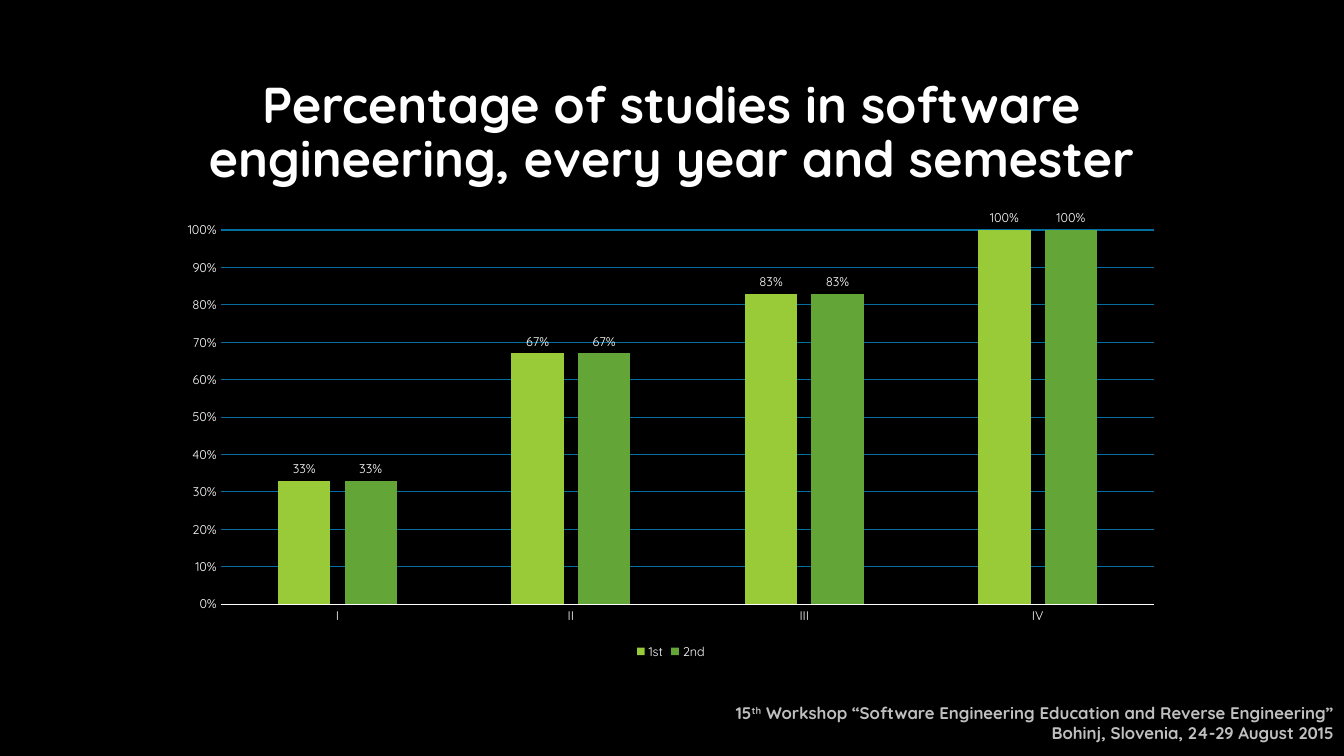
"""Build the slide on the share of software engineering studies per year and semester."""
from dataclasses import dataclass

import lxml.etree
import pptx
import pptx.chart.data
import pptx.dml.color
import pptx.enum.chart
import pptx.enum.text
import pptx.oxml
import pptx.oxml.ns
import pptx.util
from pptx.util import Inches

BLACK = pptx.dml.color.RGBColor(0x00, 0x00, 0x00)
WHITE = pptx.dml.color.RGBColor(0xFF, 0xFF, 0xFF)
SILVER = pptx.dml.color.RGBColor(0xBF, 0xBF, 0xBF)
GRID_BLUE = pptx.dml.color.RGBColor(0x05, 0x6E, 0xA0)
LIME = pptx.dml.color.RGBColor(0x99, 0xCB, 0x38)
GREEN = pptx.dml.color.RGBColor(0x63, 0xA5, 0x37)
FONT = "Quicksand"
YEARS = ["I", "II", "III", "IV"]


@dataclass(frozen=True)
class Span:
    text: str
    superscript: bool = False


@dataclass(frozen=True)
class TextBlock:
    box: tuple[float, float, float, float]
    lines: list[list[Span]]
    size: float
    color: pptx.dml.color.RGBColor
    align: pptx.enum.text.PP_ALIGN
    anchor: pptx.enum.text.MSO_ANCHOR
    line_spacing: float = 1.0


@dataclass(frozen=True)
class Semester:
    name: str
    shares: tuple[float, ...]
    color: pptx.dml.color.RGBColor


WORKSHOP = TextBlock(
    (7.08, 6.92, 6.25, 0.5),
    [
        [
            Span("15"),
            Span("th", superscript=True),
            Span(" Workshop “Software Engineering Education and Reverse Engineering”"),
        ],
        [Span("Bohinj, Slovenia, 24-29 August 2015")],
    ],
    12, SILVER, pptx.enum.text.PP_ALIGN.RIGHT, pptx.enum.text.MSO_ANCHOR.MIDDLE,
)
TITLE = TextBlock(
    (1.66, 0.42, 10, 1.5),
    [[Span("Percentage of studies in software engineering, every year and semester")]],
    36, WHITE, pptx.enum.text.PP_ALIGN.CENTER, pptx.enum.text.MSO_ANCHOR.BOTTOM, 0.9,
)
SEMESTERS = [
    Semester("1st", (0.33, 0.67, 0.83, 1), LIME),
    Semester("2nd", (0.33, 0.67, 0.83, 1), GREEN),
]


def style_font(font, size: float, color: pptx.dml.color.RGBColor, bold: bool = False) -> None:
    font.name = FONT
    font.size = pptx.util.Pt(size)
    font.bold = bold
    font.color.rgb = color


def add_text(slide, block: TextBlock) -> None:
    frame = slide.shapes.add_textbox(*map(Inches, block.box)).text_frame
    frame.word_wrap = True
    frame.vertical_anchor = block.anchor
    for index, line in enumerate(block.lines):
        paragraph = frame.add_paragraph() if index else frame.paragraphs[0]
        paragraph.alignment = block.align
        paragraph.line_spacing = block.line_spacing
        for span in line:
            run = paragraph.add_run()
            run.text = span.text
            style_font(run.font, block.size, block.color, bold=True)
            if span.superscript:
                run._r.get_or_add_rPr().set("baseline", "30000")


def place_plot(chart) -> None:
    plot_area = chart._chartSpace.chart.plotArea
    for old in plot_area.findall(pptx.oxml.ns.qn("c:layout")):
        plot_area.remove(old)
    layout = pptx.oxml.parse_xml(f"<c:layout {pptx.oxml.ns.nsdecls('c')}/>")
    manual = lxml.etree.SubElement(layout, pptx.oxml.ns.qn("c:manualLayout"))
    settings = {
        "layoutTarget": "inner", "xMode": "edge", "yMode": "edge",
        "x": "0.053", "y": "0.045", "w": "0.927", "h": "0.825",
    }
    for tag, value in settings.items():
        lxml.etree.SubElement(manual, pptx.oxml.ns.qn(f"c:{tag}")).set("val", value)
    plot_area.insert(0, layout)


def add_share_chart(slide, semesters: list[Semester]) -> None:
    shares = pptx.chart.data.CategoryChartData(number_format="0%")
    shares.categories = YEARS
    for semester in semesters:
        shares.add_series(semester.name, semester.shares)
    chart = slide.shapes.add_chart(
        pptx.enum.chart.XL_CHART_TYPE.COLUMN_CLUSTERED,
        Inches(1.66), Inches(2.08), Inches(9.99), Inches(4.5), shares,
    ).chart
    style_font(chart.font, 10, WHITE)
    chart.has_title = False
    chart.has_legend = True
    chart.legend.position = pptx.enum.chart.XL_LEGEND_POSITION.BOTTOM
    chart.legend.include_in_layout = False
    style_font(chart.legend.font, 9, WHITE)

    for axis in (chart.category_axis, chart.value_axis):
        axis.major_tick_mark = pptx.enum.chart.XL_TICK_MARK.NONE
        axis.minor_tick_mark = pptx.enum.chart.XL_TICK_MARK.NONE
        style_font(axis.tick_labels.font, 9, WHITE)
    year_line = chart.category_axis.format.line
    year_line.color.rgb = WHITE
    year_line.width = pptx.util.Pt(0.75)

    share_axis = chart.value_axis
    share_axis.minimum_scale = 0
    share_axis.maximum_scale = 1
    share_axis.major_unit = 0.1
    share_axis.format.line.fill.background()
    share_axis.tick_labels.number_format = "0%"
    share_axis.tick_labels.number_format_is_linked = False
    share_axis.major_gridlines.format.line.color.rgb = GRID_BLUE
    share_axis.major_gridlines.format.line.width = pptx.util.Pt(0.75)

    columns = chart.plots[0]
    columns.gap_width = 219
    columns.overlap = -27
    columns.vary_by_categories = False
    for series, semester in zip(columns.series, semesters):
        series.format.fill.solid()
        series.format.fill.fore_color.rgb = semester.color
        labels = series.data_labels
        labels.show_value = True
        labels.number_format = "0%"
        labels.number_format_is_linked = False
        labels.position = pptx.enum.chart.XL_LABEL_POSITION.OUTSIDE_END
        style_font(labels.font, 9, WHITE)
    place_plot(chart)


def main() -> None:
    deck = pptx.Presentation()
    deck.slide_width = Inches(13.33)
    deck.slide_height = Inches(7.5)
    slide = deck.slides.add_slide(deck.slide_layouts[6])
    slide.background.fill.solid()
    slide.background.fill.fore_color.rgb = BLACK
    for block in (WORKSHOP, TITLE):
        add_text(slide, block)
    add_share_chart(slide, SEMESTERS)
    deck.save("out.pptx")


if __name__ == "__main__":
    main()
